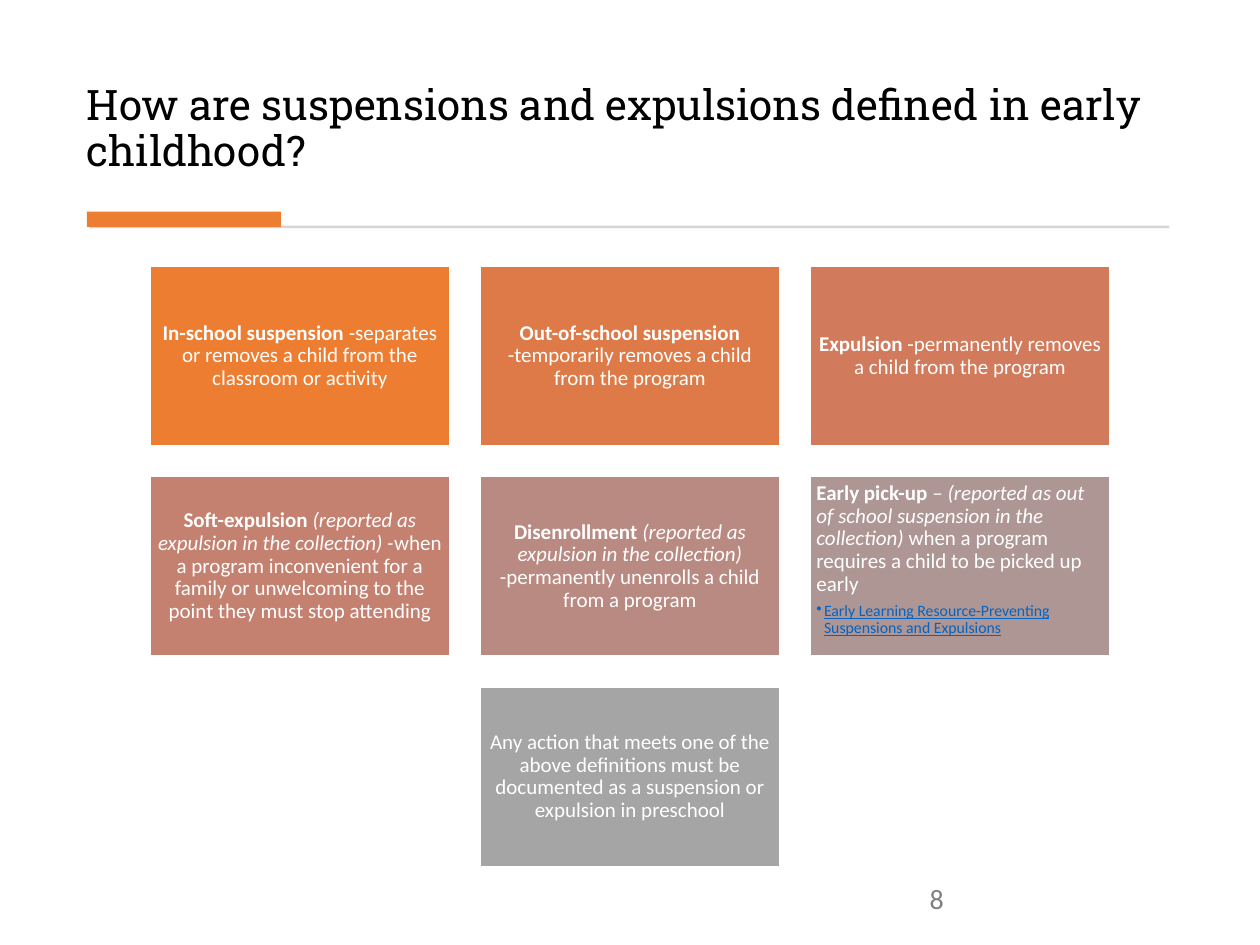
from lxml.etree import SubElement
from pptx import Presentation
from pptx.dml.color import RGBColor
from pptx.enum.shapes import MSO_SHAPE
from pptx.enum.text import MSO_ANCHOR, MSO_AUTO_SIZE, PP_ALIGN
from pptx.oxml.ns import qn
from pptx.util import Inches, Pt

TITLE = "How are suspensions and expulsions defined in early childhood?"
PAGE_NUMBER = "8"
DEFINITIONS = [
    (0, 0, "ED7D31", [("In-school suspension ", "bold"),
                      ("-separates or removes a child from the classroom or activity", "")]),
    (0, 1, "DE7A47", [("Out-of-school suspension ", "bold"),
                      ("-temporarily removes a child from the program", "")]),
    (0, 2, "D17B5C", [("Expulsion", "bold"),
                      (" -permanently removes a child from the program", "")]),
    (1, 0, "C48170", [("Soft-expulsion ", "bold"),
                      ("(reported as expulsion in the collection) -", "italic"),
                      ("when a program inconvenient for a family or unwelcoming "
                       "to the point they must stop attending", "")]),
    (1, 1, "B98A82", [("Disenrollment ", "bold"),
                      ("(reported as expulsion in the collection) ", "italic"),
                      ("-permanently unenrolls a child from a program", "")]),
    (1, 2, "AE9694", [("Early pick-up ", "bold"), ("– ", ""),
                      ("(reported as out of school suspension in the collection) ", "italic"),
                      ("when a program requires a child to be picked up early", "")]),
    (2, 1, "A5A5A5", [("Any action that meets one of the above definitions must be "
                       "documented as a suspension or expulsion in preschool", "")]),
]
RESOURCE = "Early Learning Resource-Preventing Suspensions and Expulsions"
GRID_LEFT, GRID_TOP = 1.19, 2.11
CARD_WIDTH, CARD_HEIGHT, GAP = 2.38, 1.43, 0.24


def color(value):
    return RGBColor.from_string(value)


def add_span(para, text, size, shade, style="", font="Calibri"):
    span = para.add_run()
    span.text = text
    span.font.name = font
    span.font.size = Pt(size)
    span.font.color.rgb = color(shade)
    span.font.bold = style == "bold"
    span.font.italic = style == "italic"
    span.font.underline = style == "underline"


def add_rectangle(page, left, top, width, height, fill):
    box = page.shapes.add_shape(MSO_SHAPE.RECTANGLE, Inches(left), Inches(top),
                                Inches(width), Inches(height))
    box.shadow.inherit = False
    box.fill.solid()
    box.fill.fore_color.rgb = color(fill)
    box.line.fill.background()
    return box


def set_margins(frame, margin):
    frame.margin_left = frame.margin_right = Inches(margin)
    frame.margin_top = frame.margin_bottom = Inches(margin)


def add_title(page):
    title = page.shapes.title
    title.left, title.top = Inches(0.69), Inches(0.28)
    title.width, title.height = Inches(8.62), Inches(1.11)
    frame = title.text_frame
    frame.auto_size = MSO_AUTO_SIZE.NONE
    frame.word_wrap = True
    frame.vertical_anchor = MSO_ANCHOR.BOTTOM
    set_margins(frame, 0)
    para = frame.paragraphs[0]
    para.alignment = PP_ALIGN.LEFT
    para.line_spacing = 0.9
    add_span(para, TITLE, 24, "000000", font="Roboto Slab")


def add_card(page, row, column, fill, spans):
    card = add_rectangle(page, GRID_LEFT + column * (CARD_WIDTH + GAP),
                         GRID_TOP + row * (CARD_HEIGHT + GAP), CARD_WIDTH, CARD_HEIGHT, fill)
    card.line.color.rgb = color("FFFFFF")
    card.line.width = Pt(1)
    frame = card.text_frame
    frame.word_wrap = True
    frame.vertical_anchor = MSO_ANCHOR.MIDDLE
    set_margins(frame, 0.05)
    para = frame.paragraphs[0]
    para.alignment = PP_ALIGN.CENTER
    para.line_spacing = 0.9
    for text, style in spans:
        add_span(para, text, 12, "FFFFFF", style)
    return card


def add_resource(card):
    frame = card.text_frame
    frame.vertical_anchor = MSO_ANCHOR.TOP
    frame.paragraphs[0].alignment = PP_ALIGN.LEFT
    frame.paragraphs[0].space_after = Pt(4.2)
    para = frame.add_paragraph()
    para.alignment = PP_ALIGN.LEFT
    para.line_spacing = 0.9
    properties = para._p.get_or_add_pPr()
    properties.set("marL", str(Inches(0.06)))
    properties.set("indent", str(Inches(-0.06)))
    SubElement(properties, qn("a:buChar"), char="•")
    add_span(para, RESOURCE, 9, "0563C1", "underline")


def add_page_number(page):
    box = page.shapes.add_textbox(Inches(7.28), Inches(6.95), Inches(2.03), Inches(0.4))
    box.text_frame.word_wrap = True
    add_span(box.text_frame.paragraphs[0], PAGE_NUMBER, 16, "808080")


def main():
    """Build the slide that defines suspensions and expulsions."""
    deck = Presentation()
    deck.slide_width, deck.slide_height = Inches(10), Inches(7.5)
    page = deck.slides.add_slide(deck.slide_layouts[5])
    add_title(page)
    add_rectangle(page, 0.71, 1.79, 8.57, 0.02, "D5D5D5")
    add_rectangle(page, 0.69, 1.68, 1.54, 0.12, "ED7D31")
    cards = {(row, column): add_card(page, row, column, fill, spans)
             for row, column, fill, spans in DEFINITIONS}
    add_resource(cards[1, 2])
    add_page_number(page)
    deck.save("out.pptx")


if __name__ == "__main__":
    main()
